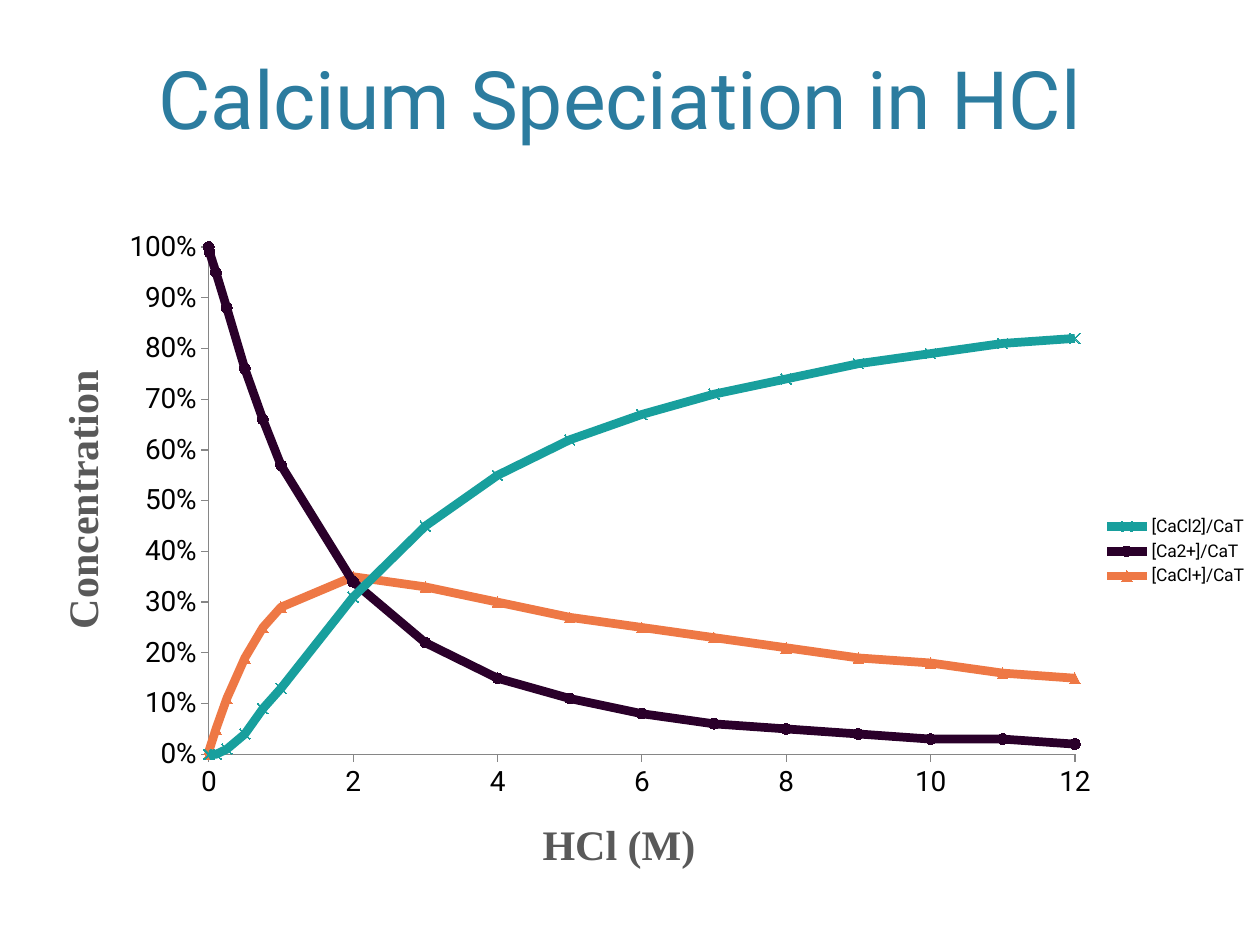
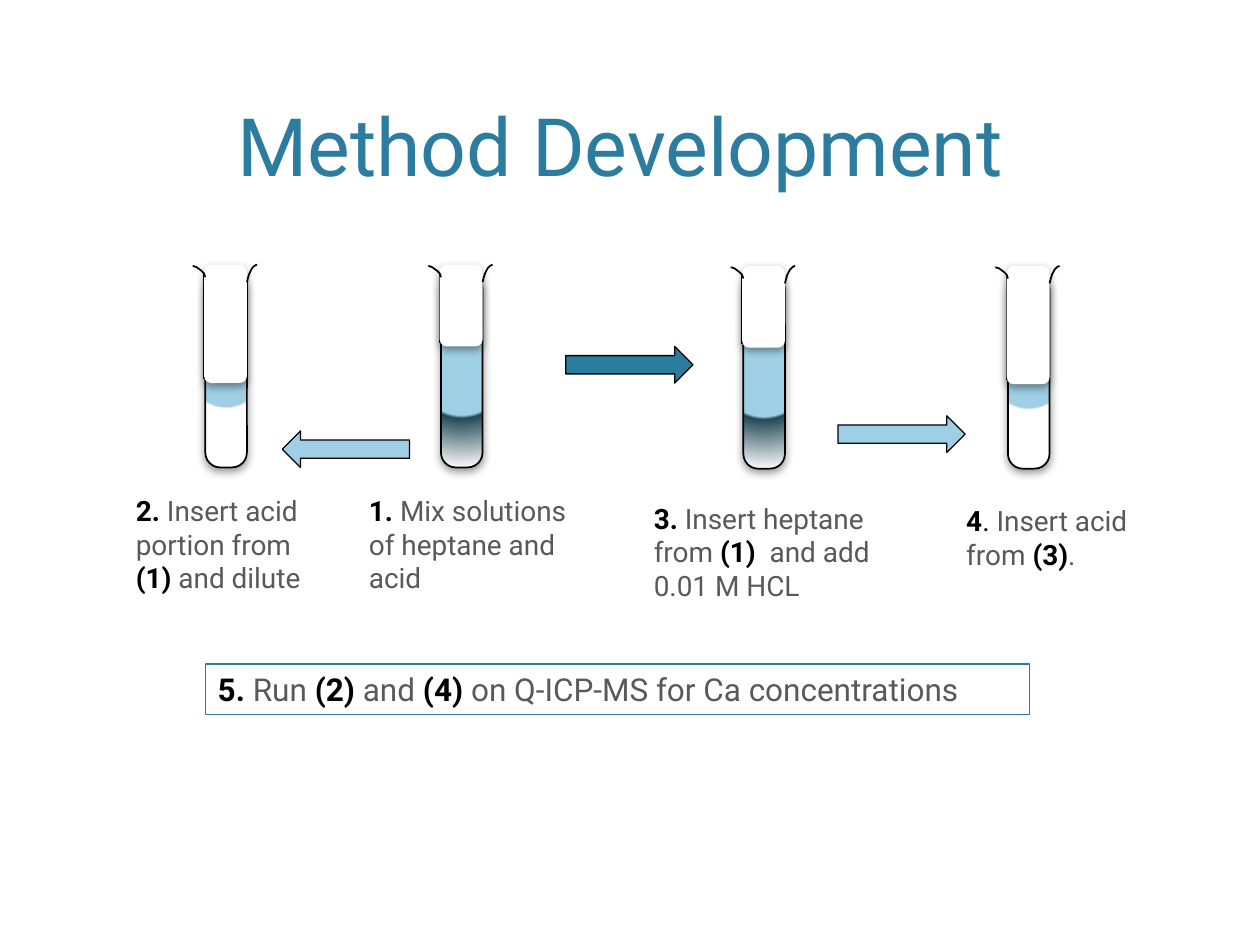
from lxml import etree
from pptx import Presentation
from pptx.chart.data import XyChartData
from pptx.dml.color import RGBColor
from pptx.enum import chart as charts, shapes, text
from pptx.oxml import ns
from pptx.util import Inches, Pt


class Theme:
    font = "Roboto"
    axis_font = "Times New Roman"
    blue = RGBColor.from_string("2C7C9F")
    sky = RGBColor.from_string("9FCFE4")
    deep = RGBColor.from_string("244A58")
    teal = RGBColor.from_string("189F9D")
    plum = RGBColor.from_string("2A002A")
    orange = RGBColor.from_string("EE7845")
    grey = RGBColor.from_string("595959")
    axis = RGBColor.from_string("868686")
    black = RGBColor(0, 0, 0)
    white = RGBColor(255, 255, 255)
    title_size = Pt(46)
    axis_title_size = Pt(24)
    result_size = Pt(18)
    label_size = Pt(16)
    legend_size = Pt(10)


def add_node(parent, tag, **attributes):
    node = etree.SubElement(parent, ns.qn(tag))
    for name, value in attributes.items():
        node.set(name, str(value))
    return node


def set_layout(owner, index, **values):
    layout = owner.find(ns.qn("c:layout"))
    if layout is None:
        layout = add_node(owner, "c:layout")
        owner.insert(index, layout)
    manual = add_node(layout, "c:manualLayout")
    for name, value in values.items():
        add_node(manual, f"c:{name}", val=value)


deck = Presentation()
deck.slide_width, deck.slide_height = Inches(10), Inches(7.5)

titles = [
    ("Calcium Speciation in HCl", (0.55, 0.33, 8.73, 0.88), text.MSO_ANCHOR.MIDDLE),
    ("Method Development ", (0.6, 0.12, 8.8, 1.46), text.MSO_ANCHOR.BOTTOM),
]
pages = []
for wording, place, anchor in titles:
    page = deck.slides.add_slide(deck.slide_layouts[5])
    title = page.shapes.title
    title.left, title.top, title.width, title.height = map(Inches, place)
    frame = title.text_frame
    frame.text = wording
    frame.auto_size = text.MSO_AUTO_SIZE.NONE
    frame.vertical_anchor = anchor
    para = frame.paragraphs[0]
    para.alignment = text.PP_ALIGN.CENTER
    para.font.name, para.font.size = Theme.font, Theme.title_size
    para.font.color.rgb = Theme.blue
    pages.append(page)
speciation_page, method_page = pages

molarity = [0, 0.01, 0.1, 0.25, 0.5, 0.75, *range(1, 13)]
species = [
    ("[CaCl2]/CaT", Theme.teal, charts.XL_MARKER_STYLE.X,
     [0, 0, 0, 0.01, 0.04, 0.09, 0.13, 0.31, 0.45, 0.55, 0.62, 0.67,
      0.71, 0.74, 0.77, 0.79, 0.81, 0.82]),
    ("[Ca2+]/CaT", Theme.plum, charts.XL_MARKER_STYLE.CIRCLE,
     [1, 0.99, 0.95, 0.88, 0.76, 0.66, 0.57, 0.34, 0.22, 0.15, 0.11, 0.08,
      0.06, 0.05, 0.04, 0.03, 0.03, 0.02]),
    ("[CaCl+]/CaT", Theme.orange, charts.XL_MARKER_STYLE.TRIANGLE,
     [0, 0.01, 0.05, 0.11, 0.19, 0.25, 0.29, 0.35, 0.33, 0.3, 0.27, 0.25,
      0.23, 0.21, 0.19, 0.18, 0.16, 0.15]),
]
data = XyChartData()
for name, color, marker, fractions in species:
    series = data.add_series(name)
    for x, y in zip(molarity, fractions):
        series.add_data_point(x, y)
chart = speciation_page.shapes.add_chart(
    charts.XL_CHART_TYPE.XY_SCATTER_SMOOTH,
    Inches(0.08), Inches(1.74), Inches(9.92), Inches(5.27), data).chart
chart.has_title = False
chart.font.name, chart.font.size = Theme.font, Theme.legend_size
chart.font.color.rgb = Theme.black
chart.has_legend = True
chart.legend.position = charts.XL_LEGEND_POSITION.RIGHT
chart.legend.include_in_layout = False
plot = chart.plots[0]
plot.vary_by_categories = False
for series, (name, color, marker, fractions) in zip(plot.series, species):
    series.smooth = True
    series.format.line.color.rgb = color
    series.format.line.width = Pt(5)
    series.marker.style, series.marker.size = marker, 6
    series.marker.format.fill.solid()
    series.marker.format.fill.fore_color.rgb = color
    series.marker.format.line.color.rgb = color

axes = [
    (chart.category_axis, "HCl (M)", 12, 2, "General", 0.42, 0.89),
    (chart.value_axis, "Concentration ", 1, 0.1, "0%", 0.03, 0.2),
]
for axis, wording, maximum, step, number_format, x, y in axes:
    axis.minimum_scale, axis.maximum_scale, axis.major_unit = 0, maximum, step
    axis.has_major_gridlines = False
    axis.major_tick_mark = charts.XL_TICK_MARK.OUTSIDE
    axis.format.line.color.rgb = Theme.axis
    axis.tick_labels.font.size = Theme.label_size
    axis.tick_labels.number_format = number_format
    axis.tick_labels.number_format_is_linked = False
    axis.axis_title.text_frame.text = wording
    font = axis.axis_title.text_frame.paragraphs[0].font
    font.name, font.size, font.bold = Theme.axis_font, Theme.axis_title_size, True
    font.color.rgb = Theme.grey
    set_layout(axis.axis_title._element, 1, xMode="edge", yMode="edge", x=x, y=y)
plot_area = chart._chartSpace.find(".//" + ns.qn("c:plotArea"))
set_layout(plot_area, 0, layoutTarget="inner", xMode="edge", yMode="edge",
           x=0.159, y=0.042, w=0.693, h=0.764)

mixture = [(0, Theme.sky), (45, Theme.sky), (48, Theme.deep), (99, Theme.white), (100, Theme.white)]
acid = [(0, Theme.sky), (36, Theme.sky), (38, Theme.white), (99, Theme.white), (100, Theme.white)]
tubes = [
    (3.49, 2.1, 0.65, mixture),
    (5.89, 2.11, 0.65, mixture),
    (1.62, 2.1, 0.94, acid),
    (7.99, 2.11, 0.94, acid),
]
right_lip = [(0.34, 0.14), (0.35, 0.1), (0.36, 0.07), (0.38, 0.03), (0.4, 0.01), (0.42, 0)]
left_lip = [(0.01, 0.1), (0, 0.07), (-0.02, 0.05), (-0.06, 0.02), (-0.09, 0.01)]
for left, top, empty_height, stops in tubes:
    walls = [(0, 0.07)]
    if stops is acid:
        walls.insert(0, (0.34, 0.14))
    for x, y in walls:
        start = top + y
        wall = method_page.shapes.add_connector(
            shapes.MSO_CONNECTOR.STRAIGHT, Inches(left + x), Inches(start),
            Inches(left + x), Inches(start + empty_height - 0.1))
        wall.line.color.rgb, wall.line.width = Theme.black, Pt(1)
        add_node(wall._element.spPr, "a:effectLst")

    glass = method_page.shapes.add_shape(
        shapes.MSO_SHAPE.ROUNDED_RECTANGLE,
        Inches(left + 0.01), Inches(top + 0.07), Inches(0.33), Inches(1.54))
    glass.adjustments[0] = 0.356
    glass.line.color.rgb, glass.line.width = Theme.black, Pt(1)
    glass.fill.gradient()
    gradient = glass._element.spPr.find(ns.qn("a:gradFill"))
    for child in list(gradient):
        gradient.remove(child)
    stop_list = add_node(gradient, "a:gsLst")
    for position, color in stops:
        stop = add_node(stop_list, "a:gs", pos=position * 1000)
        add_node(stop, "a:srgbClr", val=color)
    circle = add_node(gradient, "a:path", path="circle")
    add_node(circle, "a:fillToRect", l=50000, t=50000, r=50000, b=50000)

    empty_part = method_page.shapes.add_shape(
        shapes.MSO_SHAPE.ROUNDED_RECTANGLE,
        Inches(left), Inches(top), Inches(0.34), Inches(empty_height))
    empty_part.fill.solid()
    empty_part.fill.fore_color.rgb = Theme.white
    empty_part.line.fill.background()

    for part in (glass, empty_part):
        effects = add_node(part._element.spPr, "a:effectLst")
        shadow = add_node(effects, "a:outerShdw", blurRad=Pt(5), dist=Pt(2),
                          dir=5400000, rotWithShape=0)
        shade = add_node(shadow, "a:srgbClr", val=Theme.black)
        add_node(shade, "a:alpha", val=40000)

    for points in (right_lip, left_lip):
        corners = [(Inches(left + x), Inches(top + y)) for x, y in points]
        builder = method_page.shapes.build_freeform(*corners[0])
        builder.add_line_segments(corners[1:], close=False)
        lip = builder.convert_to_shape()
        lip.fill.background()
        lip.line.color.rgb, lip.line.width = Theme.black, Pt(1)
        lip.shadow.inherit = False

arrows = [
    (2.24, 3.42, shapes.MSO_SHAPE.LEFT_ARROW, Theme.sky),
    (4.49, 2.75, shapes.MSO_SHAPE.RIGHT_ARROW, Theme.blue),
    (6.65, 3.3, shapes.MSO_SHAPE.RIGHT_ARROW, Theme.sky),
]
for left, top, kind, color in arrows:
    arrow = method_page.shapes.add_shape(
        kind, Inches(left), Inches(top), Inches(1.01), Inches(0.29))
    arrow.fill.solid()
    arrow.fill.fore_color.rgb = color
    arrow.line.color.rgb, arrow.line.width = Theme.black, Pt(0.75)
    arrow.shadow.inherit = False

strong, dark, plain = (Theme.black, True), (Theme.black, False), (Theme.grey, False)
steps = [
    ((2.83, 3.87, 1.96, 0.91), Theme.label_size,
     [("1. ", strong), ("Mix solutions of heptane and acid", plain)]),
    ((0.98, 3.87, 1.64, 0.91), Theme.label_size,
     [("2. ", strong), ("Insert acid portion from ", plain), ("(1) ", strong),
      ("and dilute", plain)]),
    ((5.09, 3.93, 2.11, 0.91), Theme.label_size,
     [("3. ", strong), ("Insert heptane from ", plain), ("(1)  ", strong),
      ("and add 0.01 M HCL", plain)]),
    ((7.57, 3.95, 1.68, 0.64), Theme.label_size,
     [("4", strong), (". ", dark), ("Insert acid from ", plain), ("(3)", strong),
      (".", plain)]),
    ((1.63, 5.27, 6.54, 0.4), Theme.result_size,
     [("5. ", strong), ("Run ", plain), ("(2) ", strong), ("and ", plain),
      ("(4) ", strong), ("on Q-ICP-MS for Ca concentrations", plain)]),
]
for place, size, spans in steps:
    box = method_page.shapes.add_textbox(*map(Inches, place))
    box.text_frame.word_wrap = True
    para = box.text_frame.paragraphs[0]
    para.font.name, para.font.size = Theme.font, size
    for wording, (color, bold) in spans:
        span = para.add_run()
        span.text = wording
        span.font.bold = bold
        span.font.color.rgb = color
box.line.color.rgb, box.line.width = Theme.blue, Pt(0.75)

deck.save("out.pptx")
